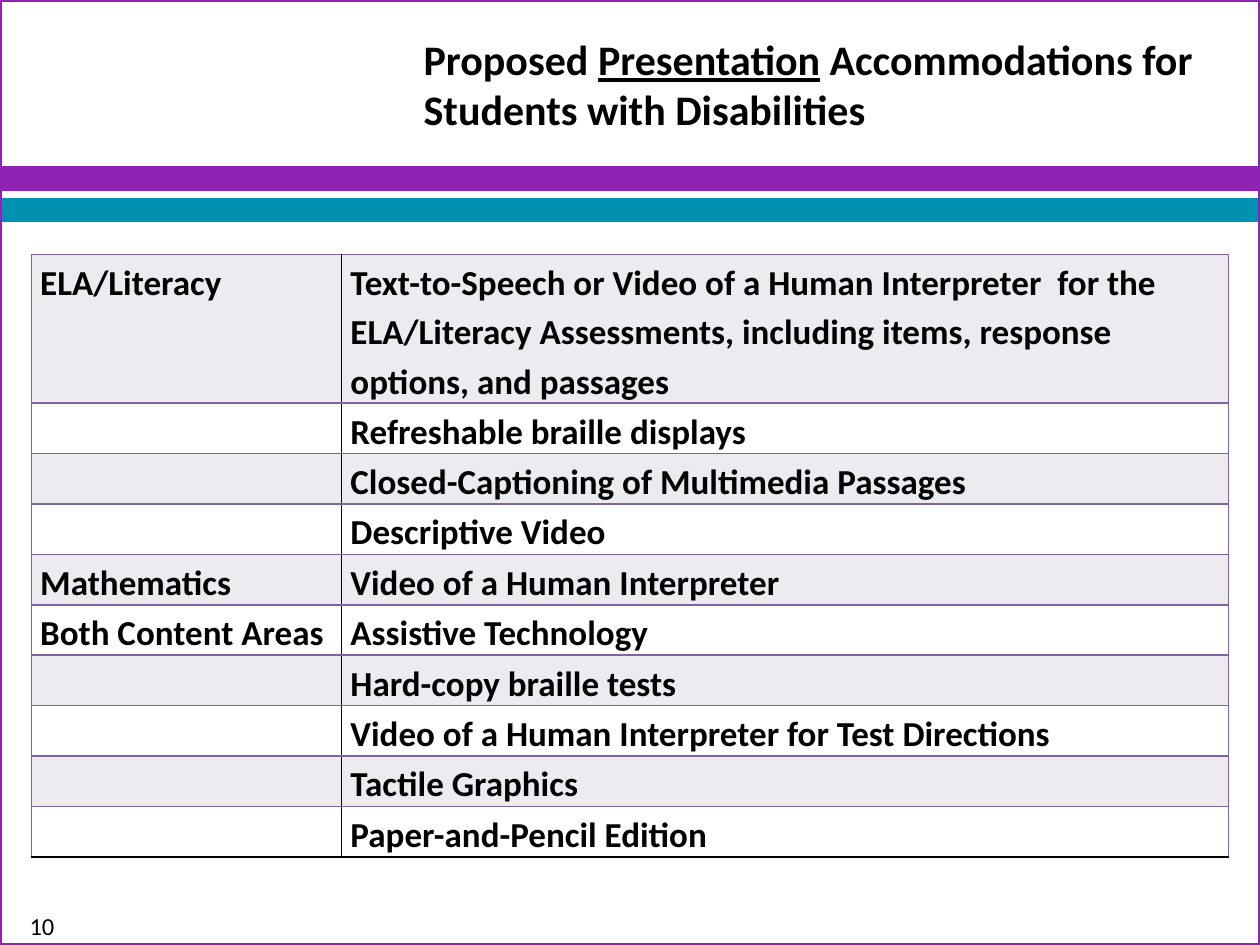
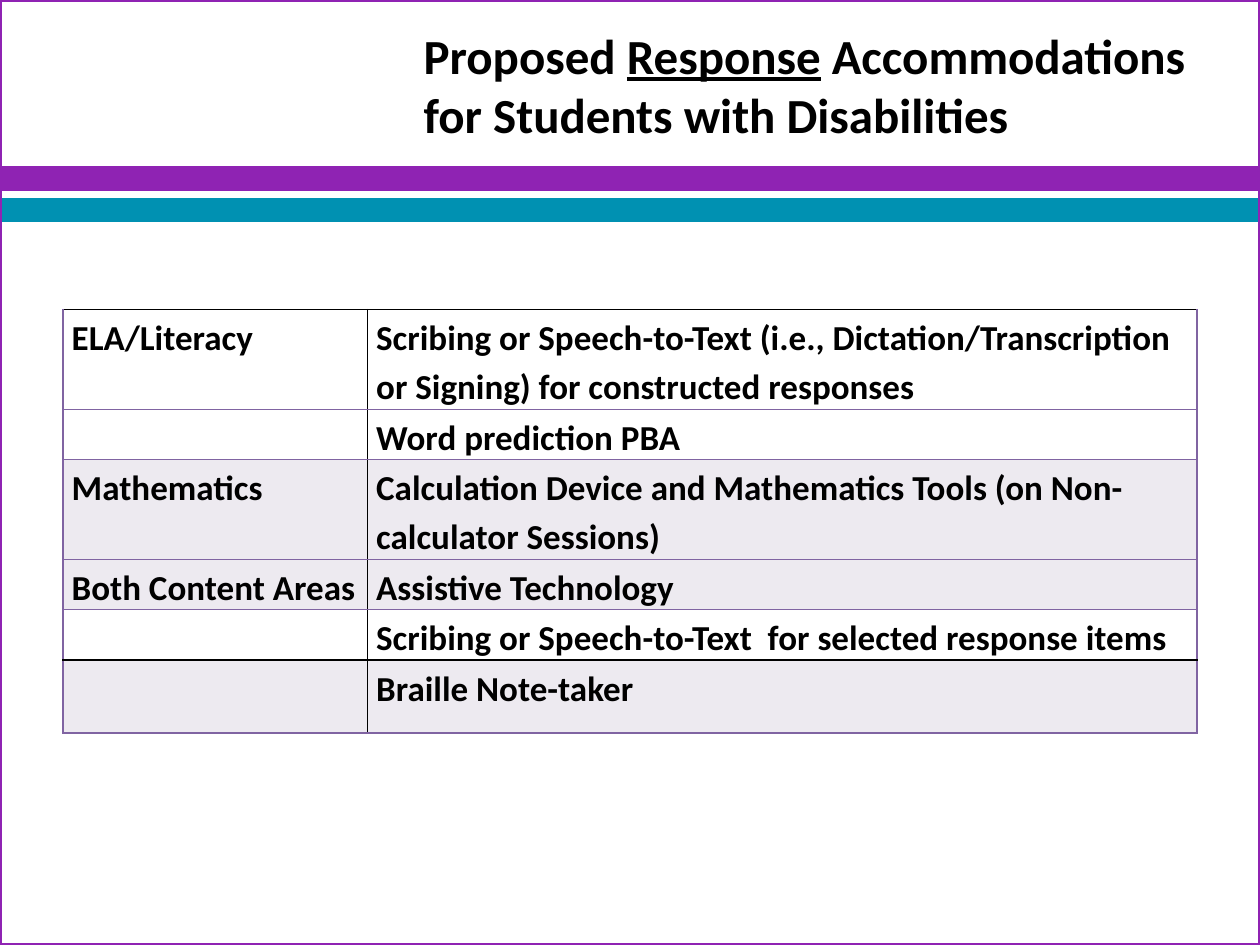
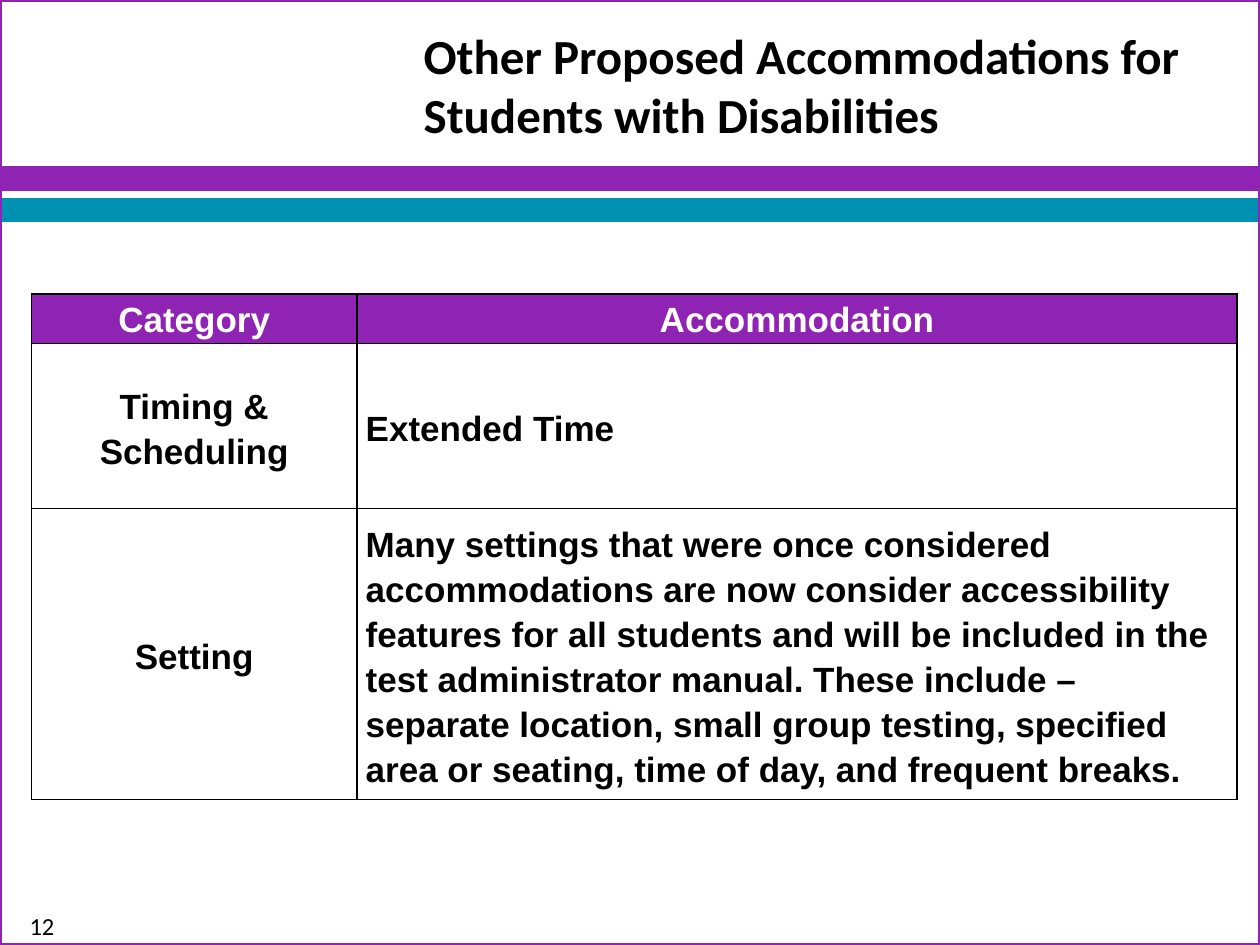
from lxml import etree
from pptx import Presentation
from pptx.dml.color import RGBColor
from pptx.enum.shapes import MSO_SHAPE
from pptx.enum.text import MSO_ANCHOR, PP_ALIGN
from pptx.oxml.ns import qn
from pptx.util import Pt

RECTANGLE = MSO_SHAPE.RECTANGLE
TOP, MIDDLE = MSO_ANCHOR.TOP, MSO_ANCHOR.MIDDLE
LEFT, CENTER = PP_ALIGN.LEFT, PP_ALIGN.CENTER

PAGE_WIDTH, PAGE_HEIGHT = 720, 540
PURPLE, TEAL, VIOLET = "8F23B3", "0091B2", "8064A2"
PALE, WHITE, BLACK = "EDEAF0", "FFFFFF", "000000"
TITLE_LEFT, TITLE_WIDTH = 222, 498
LINE_ROW = 28.8

PRESENTATION_ROWS = [
    ("ELA/Literacy", "Text-to-Speech or Video of a Human Interpreter  for the ELA/Literacy "
     "Assessments, including items, response options, and passages"),
    ("", "Refreshable braille displays"),
    ("", "Closed-Captioning of Multimedia Passages"),
    ("", "Descriptive Video"),
    ("Mathematics", "Video of a Human Interpreter"),
    ("Both Content Areas", "Assistive Technology"),
    ("", "Hard-copy braille tests"),
    ("", "Video of a Human Interpreter for Test Directions"),
    ("", "Tactile Graphics"),
    ("", "Paper-and-Pencil Edition"),
]
RESPONSE_ROWS = [
    ("ELA/Literacy", "Scribing or Speech-to-Text (i.e., Dictation/Transcription or Signing) "
     "for constructed responses"),
    ("", "Word prediction PBA"),
    ("Mathematics", "Calculation Device and Mathematics Tools (on Non-calculator Sessions)"),
    ("Both Content Areas", "Assistive Technology"),
    ("", "Scribing or Speech-to-Text  for selected response items"),
    ("", "Braille Note-taker"),
]
OTHER_ROWS = [
    ("Category", "Accommodation"),
    ("Timing & Scheduling", "Extended Time"),
    ("Setting", "Many settings that were once considered accommodations are now consider "
     "accessibility features for all students and will be included in the test administrator "
     "manual. These include – separate location, small group testing, specified area or "
     "seating, time of day, and frequent breaks."),
]


def color(value):
    """Turn a hex string into a colour."""
    return RGBColor.from_string(value)


def add_span(para, text, size, font="Calibri", ink=BLACK, bold=True, underline=None):
    """Add one styled run to a paragraph."""
    span = para.add_run()
    span.text = text
    span.font.name = font
    span.font.size = Pt(size)
    span.font.bold = bold
    span.font.underline = underline
    span.font.color.rgb = color(ink)


def add_rectangle(page, box, line, weight, fill=None):
    """Add an outlined rectangle, filled when a fill is given."""
    shape = page.shapes.add_shape(RECTANGLE, *map(Pt, box))
    shape.shadow.inherit = False
    shape.line.color.rgb = color(line)
    shape.line.width = Pt(weight)
    if fill:
        shape.fill.solid()
        shape.fill.fore_color.rgb = color(fill)
    else:
        shape.fill.background()


def add_page(deck):
    """Add a blank page with the two bands and the frame."""
    page = deck.slides.add_slide(deck.slide_layouts[6])
    for top, band in ((96, PURPLE), (114, TEAL)):
        add_rectangle(page, (0, top, PAGE_WIDTH, 12), band, 2, band)
    add_rectangle(page, (0, 0, PAGE_WIDTH, PAGE_HEIGHT), PURPLE, 2.25)
    return page


def add_text_box(page, box, anchor):
    """Add a wrapping text box and return its first paragraph."""
    frame = page.shapes.add_textbox(*map(Pt, box)).text_frame
    frame.word_wrap = True
    frame.vertical_anchor = anchor
    return frame.paragraphs[0]


def add_title(page, top, height, size, spans):
    """Add the title from pairs of text and underline."""
    para = add_text_box(page, (TITLE_LEFT, top, TITLE_WIDTH, height), MIDDLE)
    properties = para._p.get_or_add_pPr()
    properties.set("marL", str(Pt(13)))
    properties.set("indent", "0")
    for text, underline in spans:
        add_span(para, text, size, underline=underline)


def add_page_number(page, number):
    """Add the page number at the bottom left."""
    para = add_text_box(page, (0, 517, 48, 23), TOP)
    para.alignment = CENTER
    add_span(para, number, 14, bold=False)


def add_borders(cell, edges):
    """Draw the cell's left, right, top and bottom borders."""
    properties = cell._tc.get_or_add_tcPr()
    for side, ink in zip("LRTB", edges):
        border = etree.SubElement(properties, qn(f"a:ln{side}"), w=str(Pt(1)))
        fill = etree.SubElement(border, qn("a:solidFill"))
        etree.SubElement(fill, qn("a:srgbClr"), val=ink)


def fill_cell(cell, text, fill, edges, anchor, align, font, ink):
    """Set one cell's borders, fill and text."""
    add_borders(cell, edges)
    cell.fill.solid()
    cell.fill.fore_color.rgb = color(fill)
    cell.margin_left = cell.margin_right = Pt(5)
    cell.margin_top, cell.margin_bottom = Pt(0.7), Pt(0)
    cell.vertical_anchor = anchor
    if text:
        para = cell.text_frame.paragraphs[0]
        para.alignment = align
        para.line_spacing = 1.15
        para.space_after = Pt(10)
        add_span(para, text, 20, font, ink)


def add_grid(page, left, top, widths, heights):
    """Add an unstyled table with the given column widths and row heights."""
    box = (left, top, sum(widths), sum(heights))
    grid = page.shapes.add_table(len(heights), len(widths), *map(Pt, box)).table
    grid.first_row = grid.horz_banding = False
    for column, width in zip(grid.columns, widths):
        column.width = Pt(width)
    for row, height in zip(grid.rows, heights):
        row.height = Pt(height)
    return grid


def add_subject_table(page, left, top, widths, heights, rows, fills, black_rules):
    """Add a table of accommodations by subject, with some black row rules."""
    grid = add_grid(page, left, top, widths, heights)
    rules = [BLACK if index in black_rules else VIOLET for index in range(len(rows) + 1)]
    sides = [(VIOLET, BLACK), (BLACK, VIOLET)]
    for r, (texts, fill) in enumerate(zip(rows, fills)):
        for c, text in enumerate(texts):
            edges = (*sides[c], rules[r], rules[r + 1])
            fill_cell(grid.cell(r, c), text, fill, edges, TOP, LEFT, "Calibri", BLACK)


def add_category_table(page, left, top, widths, heights, rows):
    """Add a black-ruled table with a purple header row."""
    grid = add_grid(page, left, top, widths, heights)
    for r, texts in enumerate(rows):
        fill, ink, anchor = (WHITE, BLACK, MIDDLE) if r else (PURPLE, WHITE, TOP)
        for c, text in enumerate(texts):
            align = LEFT if r and c else CENTER
            fill_cell(grid.cell(r, c), text, fill, [BLACK] * 4, anchor, align, "Arial", ink)


def main():
    """Build the three pages and save the deck."""
    deck = Presentation()
    deck.slide_width, deck.slide_height = Pt(PAGE_WIDTH), Pt(PAGE_HEIGHT)
    ending = " Accommodations for Students with Disabilities"

    page = add_page(deck)
    add_title(page, 12, 72, 24, [("Proposed ", None), ("Presentation", True), (ending, None)])
    add_page_number(page, "10")
    add_subject_table(page, 18, 145.5, (177.3, 506.7), [84.9] + [LINE_ROW] * 9,
                      PRESENTATION_ROWS, [PALE, WHITE] * 5, {10})

    page = add_page(deck)
    add_title(page, 0, 96, 28, [("Proposed ", None), ("Response", True), (ending, None)])
    add_subject_table(page, 36, 177, (174, 474),
                      [56.9, LINE_ROW, 56.9, LINE_ROW, LINE_ROW, 41.8],
                      RESPONSE_ROWS, [WHITE, WHITE, PALE, PALE, WHITE, PALE], {0, 5})

    page = add_page(deck)
    add_title(page, 0, 96, 28, [("Other Proposed" + ending, None)])
    add_category_table(page, 18, 168, (186, 503), (26.5, 94.3, 155), OTHER_ROWS)
    add_page_number(page, "12")

    deck.save("out.pptx")


if __name__ == "__main__":
    main()
